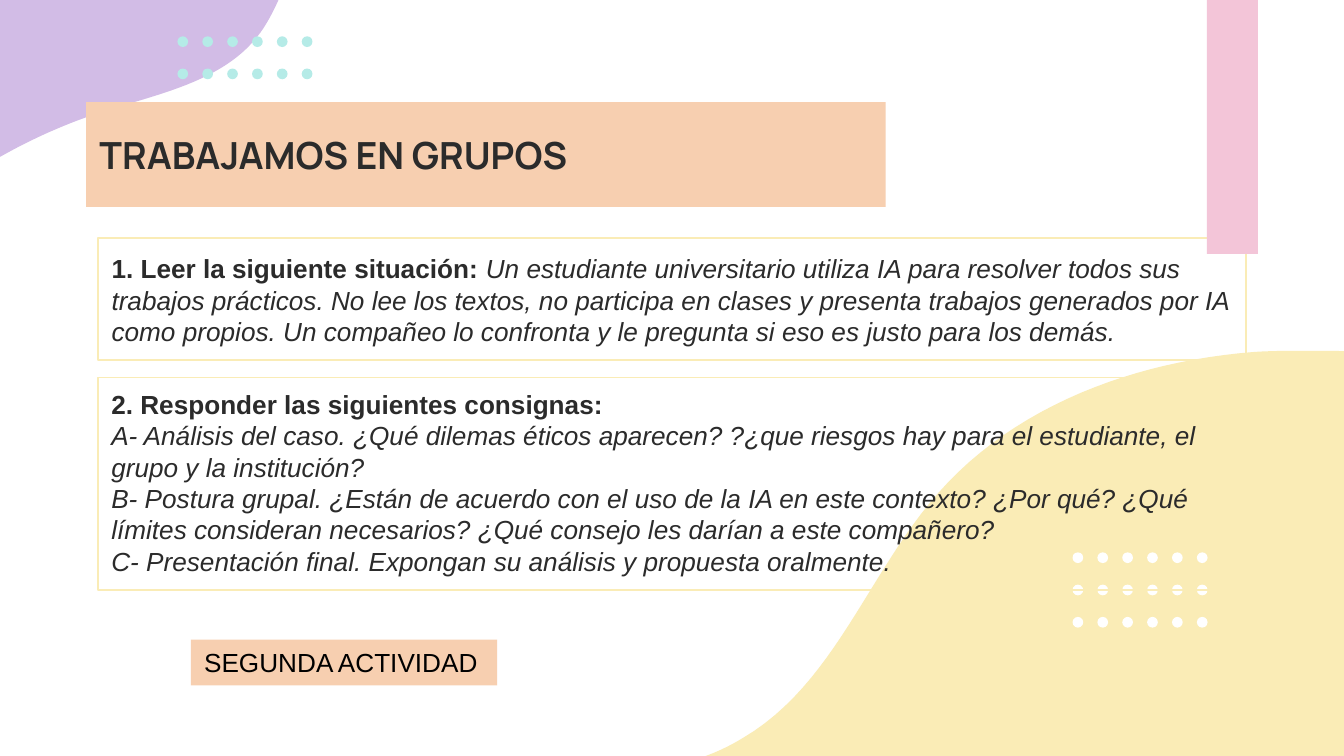
"""Builds the group activity slide with pastel decoration."""
from pptx import Presentation
from pptx.dml.color import RGBColor
from pptx.enum.shapes import MSO_SHAPE
from pptx.enum.text import MSO_ANCHOR, MSO_AUTO_SIZE, PP_ALIGN
from pptx.util import Inches, Pt

RECT, OVAL = MSO_SHAPE.RECTANGLE, MSO_SHAPE.OVAL
MIDDLE, BOTTOM, TOP = MSO_ANCHOR.MIDDLE, MSO_ANCHOR.BOTTOM, MSO_ANCHOR.TOP
LEFT, NO_FIT = PP_ALIGN.LEFT, MSO_AUTO_SIZE.NONE

THEME = {
    "lilac": "D2BCE6", "mint": "B5EBE7", "cream": "FAECB6", "peach": "F7CFB0",
    "pink": "F3C5D8", "white": "FFFFFF", "dark": "2B2B2B", "black": "000000",
    "heading": "Manrope", "body": "Arial", "title_size": 20, "body_size": 14,
    "border": 0.75,
}
BODY = {"name": THEME["body"], "size": Pt(THEME["body_size"])}
STYLES = {
    "title": {"name": THEME["heading"], "size": Pt(THEME["title_size"]), "bold": True, "italic": False},
    "strong": {**BODY, "bold": True, "italic": False},
    "italic": {**BODY, "bold": False, "italic": True},
    "plain": {**BODY, "bold": False, "italic": False},
}

TITLE = [[("TRABAJAMOS EN GRUPOS", "title")]]
SITUATION = [[
    ("1. Leer la siguiente situación: ", "strong"),
    ("Un estudiante universitario utiliza IA para resolver todos sus trabajos prácticos. "
     "No lee los textos, no participa en clases y presenta trabajos generados por IA como "
     "propios. Un compañeo lo confronta y le pregunta si eso es justo para los demás.", "italic"),
]]
TASKS = [
    [("2. Responder las siguientes consignas:", "strong")],
    [("A- Análisis del caso. ¿Qué dilemas éticos aparecen? ?¿que riesgos hay para el "
      "estudiante, el grupo y la institución?", "italic")],
    [("B- Postura grupal. ¿Están de acuerdo con el uso de la IA en este contexto? ¿Por qué? "
      "¿Qué límites consideran necesarios? ¿Qué consejo les darían a este compañero?", "italic")],
    [("C- Presentación final. Expongan su análisis y propuesta oralmente.", "italic")],
]
LABEL = [[("SEGUNDA ACTIVIDAD", "plain")]]

LILAC_WAVE = [
    (-0.45, 1.46), (-0.45, -1.84), (3.89, -1.84), (3.89, -0.99),
    (3.73, -0.82, 3.52, -0.7, 3.28, -0.68), (3.25, -0.68, 3.21, -0.67, 3.17, -0.67),
    (3.06, -0.67, 2.94, -0.69, 2.83, -0.69), (2.71, -0.69, 2.58, -0.67, 2.48, -0.61),
    (2.18, -0.44, 2.14, -0.04, 1.94, 0.24), (1.69, 0.59, 1.22, 0.69, 0.8, 0.82),
    (0.35, 0.96, -0.07, 1.18, -0.45, 1.46),
]
CREAM_WAVE = [
    (9.74, 2.61), (9.6, 2.61, 9.46, 2.61, 9.32, 2.62), (8.45, 2.69, 7.56, 3.01, 6.98, 3.67),
    (6.46, 4.26, 6.21, 5.09, 5.53, 5.49), (5.19, 5.7, 4.81, 5.75, 4.41, 5.75),
    (4.05, 5.75, 3.67, 5.71, 3.31, 5.69), (3.31, 7.99), (10.13, 7.99), (10.13, 2.62),
    (10, 2.61, 9.87, 2.61, 9.74, 2.61),
]
CURVE_STEPS = 24
SLIDE_W = 10
DOT, DOT_DX, DOT_DY, DOT_COLS = 0.08, 0.185, 0.24, 6


def color(key):
    return RGBColor.from_string(THEME[key])


def fill_with(sp, key):
    sp.fill.solid()
    sp.fill.fore_color.rgb = color(key)


def paint(sp, key):
    sp.shadow.inherit = False
    fill_with(sp, key)
    sp.line.fill.background()


def outline(sp):
    sp.fill.background()
    sp.line.color.rgb = color("cream")
    sp.line.width = Pt(THEME["border"])


def add_preset(s, kind, box, fill):
    paint(s.shapes.add_shape(kind, *map(Inches, box)), fill)


def add_wave(s, segments, fill):
    points = [segments[0]]
    for seg in segments[1:]:
        if len(seg) == 2:
            points.append(seg)
            continue
        ctrl = [points[-1], seg[:2], seg[2:4], seg[4:]]
        for i in range(1, CURVE_STEPS + 1):
            t = i / CURVE_STEPS
            weights = ((1 - t) ** 3, 3 * t * (1 - t) ** 2, 3 * t * t * (1 - t), t ** 3)
            points.append(tuple(sum(w * c[k] for w, c in zip(weights, ctrl)) for k in (0, 1)))
    outline_points = [(Inches(x), Inches(y)) for x, y in points]
    builder = s.shapes.build_freeform(*outline_points[0])
    builder.add_line_segments(outline_points[1:], close=True)
    paint(builder.convert_to_shape(), fill)


def add_dots(s, left, top, rows, fill):
    for row in range(rows):
        for col in range(DOT_COLS):
            add_preset(s, OVAL, (left + col * DOT_DX, top + row * DOT_DY, DOT, DOT), fill)


def write(sp, box, paragraphs, anchor, ink="dark", pad=0.1, wrap=True):
    sp.left, sp.top, sp.width, sp.height = map(Inches, box)
    tf = sp.text_frame
    frame = {"auto_size": NO_FIT, "word_wrap": wrap, "vertical_anchor": anchor,
             "margin_left": Inches(0.1), "margin_right": Inches(0.1),
             "margin_top": Inches(pad), "margin_bottom": Inches(pad)}
    for name, value in frame.items():
        setattr(tf, name, value)
    for i, runs in enumerate(paragraphs):
        p = tf.add_paragraph() if i else tf.paragraphs[0]
        p.alignment, p.line_spacing = LEFT, 1.0
        p.space_before = p.space_after = Pt(0)
        for text, style in runs:
            r = p.add_run()
            r.text = text
            r.font.color.rgb = color(ink)
            for name, value in STYLES[style].items():
                setattr(r.font, name, value)


def main():
    prs = Presentation()
    prs.slide_width, prs.slide_height = Inches(SLIDE_W), Inches(SLIDE_W * 9 / 16)
    s = prs.slides.add_slide(prs.slide_layouts[0])
    title, situation = s.placeholders

    add_wave(s, LILAC_WAVE, "lilac")
    add_dots(s, 1.32, 0.27, 2, "mint")
    add_wave(s, CREAM_WAVE, "cream")

    for sp in (title, situation):
        s.shapes.element.append(sp.element)
    write(title, (0.64, 0.76, 5.95, 0.78), TITLE, MIDDLE)
    fill_with(title, "peach")
    write(situation, (0.73, 1.77, 8.54, 0.91), SITUATION, BOTTOM)
    outline(situation)

    add_preset(s, RECT, (8.98, 0, 0.38, 1.89), "pink")
    add_dots(s, 7.98, 4.11, 3, "white")

    label = s.shapes.add_textbox(0, 0, 0, 0)
    write(label, (1.42, 4.76, 2.28, 0.34), LABEL, TOP, "black", pad=0.05, wrap=False)
    fill_with(label, "peach")

    tasks = s.shapes.add_textbox(0, 0, 0, 0)
    write(tasks, (0.73, 2.81, 8.54, 1.58), TASKS, BOTTOM)
    outline(tasks)
    prs.save("out.pptx")


if __name__ == "__main__":
    main()
